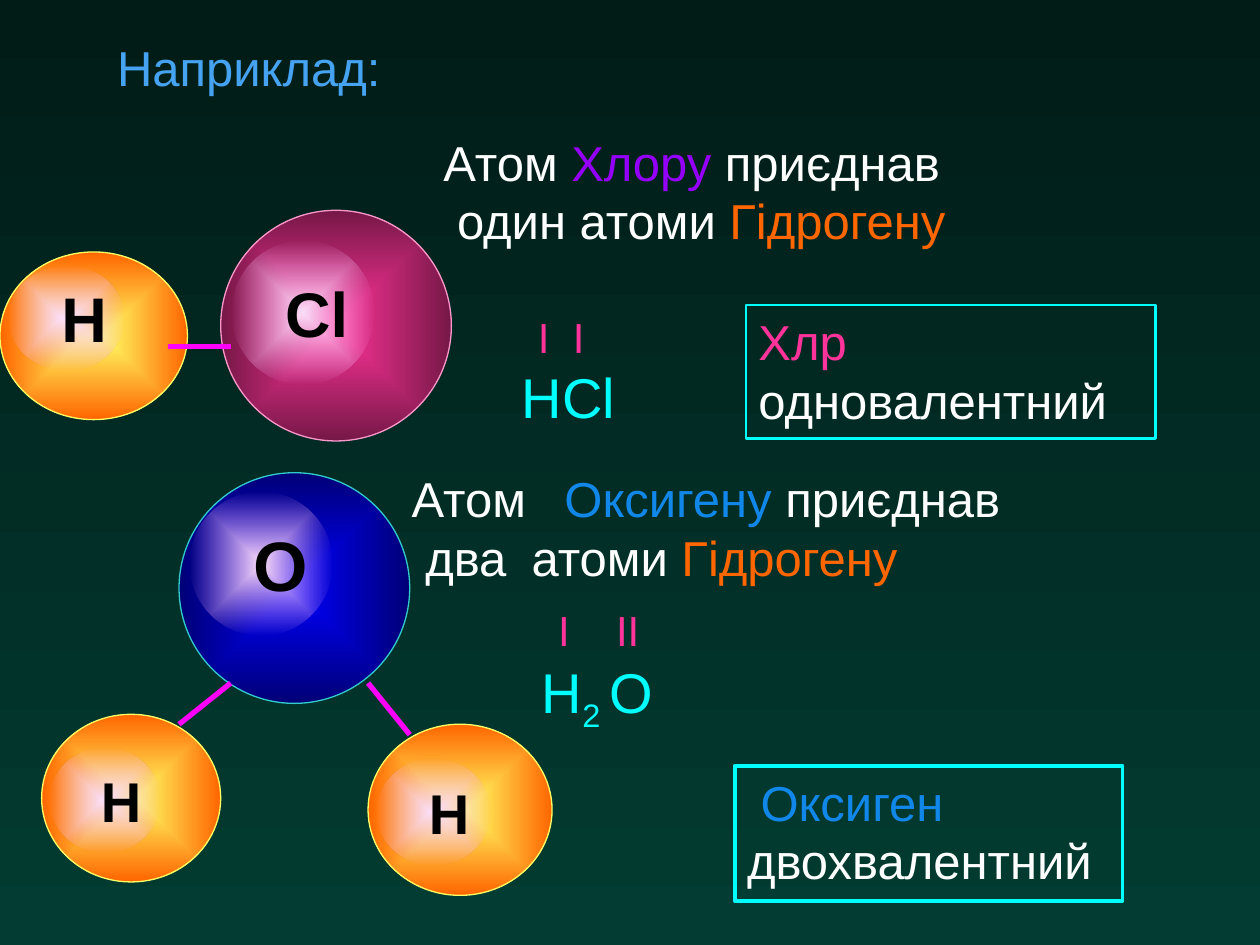
"""Build a slide on the valence of chlorine and oxygen in HCl and water."""
import pptx
import pptx.dml.color
import pptx.enum.shapes
import pptx.enum.text
import pptx.oxml
import pptx.oxml.ns
import pptx.util
from pptx.util import Cm

THEME = {
    "font": "Arial",
    "background": ("011C17", "023C32"),
    "gloss": ("FCDFF8", "F7A7ED"),
    "hydrogen": ("FFFF66", "FF6600", "FFFF66"),
    "oxygen": ("0000FF", "000076", "33CCCC"),
    "chlorine": ("FF3399", "761847", "FF99CC"),
    "title": "45A3F1", "body": "FFFFFF", "label": "000000",
    "violet": "9500FA", "orange": "FF6600", "blue": "1187E9",
    "pink": "FF3399", "cyan": "00FFFF", "bond": "FF00FF",
    "text": 28, "formula": 32, "valence": 24,
    "outline": 0.75, "bond_width": 3,
}

# Atom: symbol, size, label shift in points, palette, box, gloss drop
ATOMS = [
    ("Н", 36, 20, "hydrogen", (0, 5.08, 3.78, 3.38), 0.08),
    ("Н", 32, 18, "hydrogen", (0.84, 14.4, 3.61, 3.38), 0.2),
    ("Н", 32, 18, "hydrogen", (7.42, 14.6, 3.71, 3.45), 0.2),
    ("O", 40, 22, "oxygen", (3.61, 9.53, 4.65, 4.65), 0.08),
    ("Cl", 36, 16, "chlorine", (4.45, 4.24, 4.65, 4.65), 0.13),
]
BONDS = [
    (3.38, 6.98, 4.65, 6.98),
    (3.61, 14.6, 4.65, 13.77),
    (7.42, 13.77, 8.26, 14.81),
]
TEXTS = [
    {"box": (2.11, 0.64, 5.92, 1.45), "size": "text",
     "lines": [[("Наприклад:", "title")]]},
    {"box": (8.69, 2.54, 15.44, 2.62), "size": "text",
     "lines": [[("Атом ", "body"), ("Хлору", "violet"), (" приєднав", "body")],
               [(" один атоми ", "body"), ("Гідрогену", "orange")]]},
    {"box": (9.96, 7.19, 3.18, 1.6), "size": "formula",
     "lines": [[(" HСl", "cyan")]]},
    {"box": (10.36, 6.15, 2.34, 1.27), "size": "valence", "tabs": [0.94],
     "lines": [[(" І\tІ", "pink")]]},
    {"box": (8.05, 9.32, 13.13, 2.62), "size": "text", "tabs": [3.08, 2.42],
     "lines": [[("Атом\t", "body"), ("Оксигену", "blue"), (" приєднав", "body")],
               [(" два\tатоми ", "body"), ("Гідрогену", "orange")]]},
    {"box": (11, 12.07, 2.74, 1.27), "size": "valence", "tabs": [1.17],
     "lines": [[("І\tІІ", "pink")]]},
    {"box": (15.04, 6.15, 8.26, 2.69), "size": "text", "border": 1.5,
     "lines": [[("Хлр", "pink")], [("одновалентний", "body")]]},
    {"box": (10.36, 13.13, 3.81, 1.6), "size": "formula",
     "lines": [[(" H", "cyan"), ("2 ", "cyan", -25000), ("О", "cyan")]]},
    {"box": (14.81, 15.44, 7.82, 2.72), "size": "text", "border": 2.25,
     "lines": [[(" Оксиген", "blue")], [("двохвалентний", "body")]]},
]


def color(name):
    return pptx.dml.color.RGBColor.from_string(THEME.get(name, name))


def xml(tag, body="", **attrs):
    attributes = "".join(f' {key}="{value}"' for key, value in attrs.items())
    ns = pptx.oxml.ns.nsdecls("a")
    return pptx.oxml.parse_xml(f"<a:{tag} {ns}{attributes}>{body}</a:{tag}>")


def two_stops(fill, colors):
    fill.gradient()
    for stop, value in zip(fill.gradient_stops, colors):
        stop.color.rgb = color(value)


def add_ball(shapes, box, colors, clear_edge=False):
    s = shapes.add_shape(pptx.enum.shapes.MSO_SHAPE.OVAL, *map(Cm, box))
    s.shadow.inherit = False
    s.line.fill.background()
    two_stops(s.fill, colors)
    grad = s._element.spPr.find(pptx.oxml.ns.qn("a:gradFill"))
    center = '<a:fillToRect l="50000" t="50000" r="50000" b="50000"/>'
    lin = grad.find(pptx.oxml.ns.qn("a:lin"))
    grad.replace(lin, xml("path", center, path="shape"))
    if clear_edge:
        edge = list(grad.iter(pptx.oxml.ns.qn("a:srgbClr")))[-1]
        edge.append(xml("alpha", val=0))
    return s


def style(r, size, name):
    r.font.name = THEME["font"]
    r.font.size = pptx.util.Pt(size)
    r.font.color.rgb = color(name)


def add_atom(slide, symbol, size, shift, palette, box, drop):
    group = slide.shapes.add_group_shape()
    inner, outer, outline = THEME[palette]
    ball = add_ball(group.shapes, box, (inner, outer))
    ball.line.color.rgb = color(outline)
    ball.line.width = pptx.util.Pt(THEME["outline"])
    x, y, w, h = box
    gloss_box = (x + 0.045 * w, y + drop * h, 0.62 * w, 0.625 * h)
    gloss = add_ball(group.shapes, gloss_box, THEME["gloss"], clear_edge=True)
    tf = gloss.text_frame
    tf.text = symbol
    tf.word_wrap = False
    tf.margin_left += pptx.util.Pt(shift)
    tf.vertical_anchor = pptx.enum.text.MSO_ANCHOR.MIDDLE
    p = tf.paragraphs[0]
    p.alignment = pptx.enum.text.PP_ALIGN.CENTER
    style(p.runs[0], size, "label")
    p.runs[0].font.bold = True


def add_bond(slide, ends):
    line = slide.shapes.add_connector(
        pptx.enum.shapes.MSO_CONNECTOR.STRAIGHT, *map(Cm, ends))
    line.line.color.rgb = color("bond")
    line.line.width = pptx.util.Pt(THEME["bond_width"])
    line._element.spPr.append(xml("effectLst"))


def add_text(slide, item):
    box = [Cm(length) for length in item["box"]]
    if "border" in item:
        s = slide.shapes.add_shape(pptx.enum.shapes.MSO_SHAPE.RECTANGLE, *box)
        s.shadow.inherit = False
        s.fill.background()
        s.line.color.rgb = color("cyan")
        s.line.width = pptx.util.Pt(item["border"])
    else:
        s = slide.shapes.add_textbox(*box)
    tf = s.text_frame
    tf.word_wrap = True
    tf.auto_size = pptx.enum.text.MSO_AUTO_SIZE.SHAPE_TO_FIT_TEXT
    tf.vertical_anchor = pptx.enum.text.MSO_ANCHOR.TOP
    tabs = item.get("tabs", [])
    for i, line in enumerate(item["lines"]):
        p = tf.add_paragraph() if i else tf.paragraphs[0]
        p.alignment = pptx.enum.text.PP_ALIGN.LEFT
        if i < len(tabs):
            stop = f'<a:tab pos="{Cm(tabs[i])}" algn="l"/>'
            p._p.get_or_add_pPr().append(xml("tabLst", stop))
        for text, name, *baseline in line:
            r = p.add_run()
            r.text = text
            style(r, THEME[item["size"]], name)
            if baseline:
                r.font._element.set("baseline", str(baseline[0]))


def main():
    prs = pptx.Presentation()
    prs.slide_width, prs.slide_height = Cm(25.4), Cm(19.05)
    slide = prs.slides.add_slide(prs.slide_layouts[6])
    two_stops(slide.background.fill, THEME["background"])
    slide.background.fill.gradient_angle = 270
    for atom in ATOMS:
        add_atom(slide, *atom)
    for ends in BONDS:
        add_bond(slide, ends)
    for item in TEXTS:
        add_text(slide, item)
    prs.save("out.pptx")


if __name__ == "__main__":
    main()
